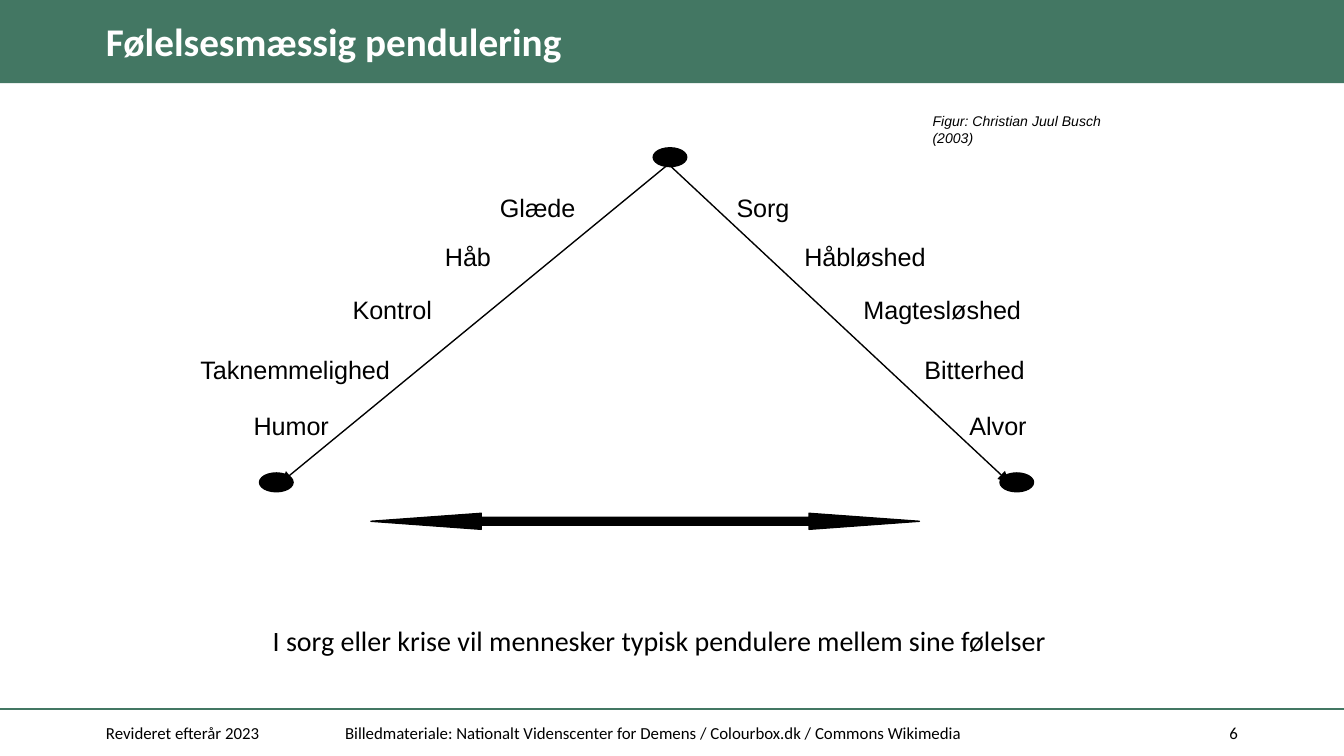
from lxml.etree import SubElement
from pptx import Presentation
from pptx.dml.color import RGBColor
from pptx.enum.shapes import MSO_CONNECTOR as CONN, MSO_SHAPE as SHAPE
from pptx.enum.text import MSO_ANCHOR as ANCHOR, PP_ALIGN as ALIGN
from pptx.oxml.ns import qn
from pptx.util import Pt

GREEN, BLACK, WHITE = "437763", "000000", "FFFFFF"
WIDTH, HEIGHT = 720, 405
INSET = 7.2

TITLE = "Følelsesmæssig pendulering"
CREDIT = "Figur: Christian Juul Busch (2003)"
CAPTION = "I sorg eller krise vil mennesker typisk pendulere mellem sine følelser"
FEELINGS = [
    ("Glæde", 268, "Sorg", 394.7, 99.4),
    ("Håb", 238.5, "Håbløshed", 431, 125.3),
    ("Kontrol", 189, "Magtesløshed", 462.7, 154.1),
    ("Taknemmelighed", 107.5, "Bitterhed", 495.3, 185.8),
    ("Humor", 136, "Alvor", 519.5, 216),
]
ARMS = [((360, 86.4), (150.5, 258.5)), ((355.7, 85.7), (540.7, 258.5))]
BOBS = [(139, 253.4), (535.7, 253.4), (349.9, 79.2)]
FOOTER = [
    ("Revideret efterår 2023", 49.7, 121, ALIGN.LEFT),
    ("Billedmateriale: Nationalt Videnscenter for Demens / Colourbox.dk / Commons Wikimedia",
     177.8, 453.6, ALIGN.LEFT),
    ("6", 637.2, 33.1, ALIGN.RIGHT),
]


def rgb(color):
    return RGBColor.from_string(color)


def add_shape(kind, x, y, w, h, color, outline=True):
    sp = s.shapes.add_shape(kind, Pt(x), Pt(y), Pt(w), Pt(h))
    sp.shadow.inherit = False
    sp.fill.solid()
    sp.fill.fore_color.rgb = rgb(color)
    if outline:
        sp.line.color.rgb = rgb(color)
        sp.line.width = Pt(0.75)
    else:
        sp.line.fill.background()
    return sp


def add_line(start, end, color, width, arrow=False):
    line = s.shapes.add_connector(CONN.STRAIGHT, *map(Pt, start + end))
    line.line.color.rgb = rgb(color)
    line.line.width = Pt(width)
    if arrow:
        SubElement(line.line._get_or_add_ln(), qn("a:tailEnd"), type="triangle")
    SubElement(line._element.spPr, qn("a:effectLst"))


def add_text(text, x, y, w, h, size, font="Calibri", color=BLACK, bold=False,
             italic=False, align=ALIGN.LEFT, anchor=ANCHOR.MIDDLE, wrap=True, tab=None):
    tf = s.shapes.add_textbox(Pt(x), Pt(y), Pt(w), Pt(h)).text_frame
    tf.word_wrap = wrap
    tf.vertical_anchor = anchor
    tf.text = text
    p = tf.paragraphs[0]
    p.alignment = align
    if tab:
        stops = SubElement(p._p.get_or_add_pPr(), qn("a:tabLst"))
        SubElement(stops, qn("a:tab"), pos=str(Pt(tab)), algn="l")
    f = p.runs[0].font
    f.name, f.size, f.bold, f.italic = font, Pt(size), bold, italic
    f.color.rgb = rgb(color)
    return tf


prs = Presentation()
prs.slide_width, prs.slide_height = Pt(WIDTH), Pt(HEIGHT)
s = prs.slides.add_slide(prs.slide_layouts[6])

add_shape(SHAPE.RECTANGLE, 0, 0, WIDTH, 44.6, GREEN, outline=False)
add_line((0, 380), (WIDTH, 380), GREEN, 1)
title = add_text(TITLE, 49.7, 7.9, 535.7, 31.7, 21, color=WHITE, bold=True)
title.margin_top = title.margin_bottom = title.margin_right = 0
title.paragraphs[0].line_spacing = 0.9

for start, end in ARMS:
    add_line(start, end, BLACK, 0.75, arrow=True)
swing = add_shape(SHAPE.LEFT_RIGHT_ARROW, 198.7, 275, 293.8, 8.6, BLACK)
swing.adjustments[0], swing.adjustments[1] = 0.5, 6.88
for x, y in BOBS:
    add_shape(SHAPE.OVAL, x, y, 18, 10.1, BLACK)

for left, left_x, right, right_x, y in FEELINGS:
    add_text(f"{left}\t{right}", left_x - INSET, y, right_x - left_x + 110, 23.8,
             13.5, "Arial", tab=right_x - left_x)

add_text(CREDIT, 492.5, 56.9, 128.2, 16.6, 7.5, "Arial", italic=True,
         anchor=ANCHOR.TOP, wrap=False)
caption = add_text(CAPTION, 141.1, 330.5, 469.4, 25.2, 15, anchor=ANCHOR.TOP)
caption.margin_left = Pt(5)
for text, x, w, align in FOOTER:
    add_text(text, x, 381.6, w, 21.6, 9, align=align)

prs.save("out.pptx")
